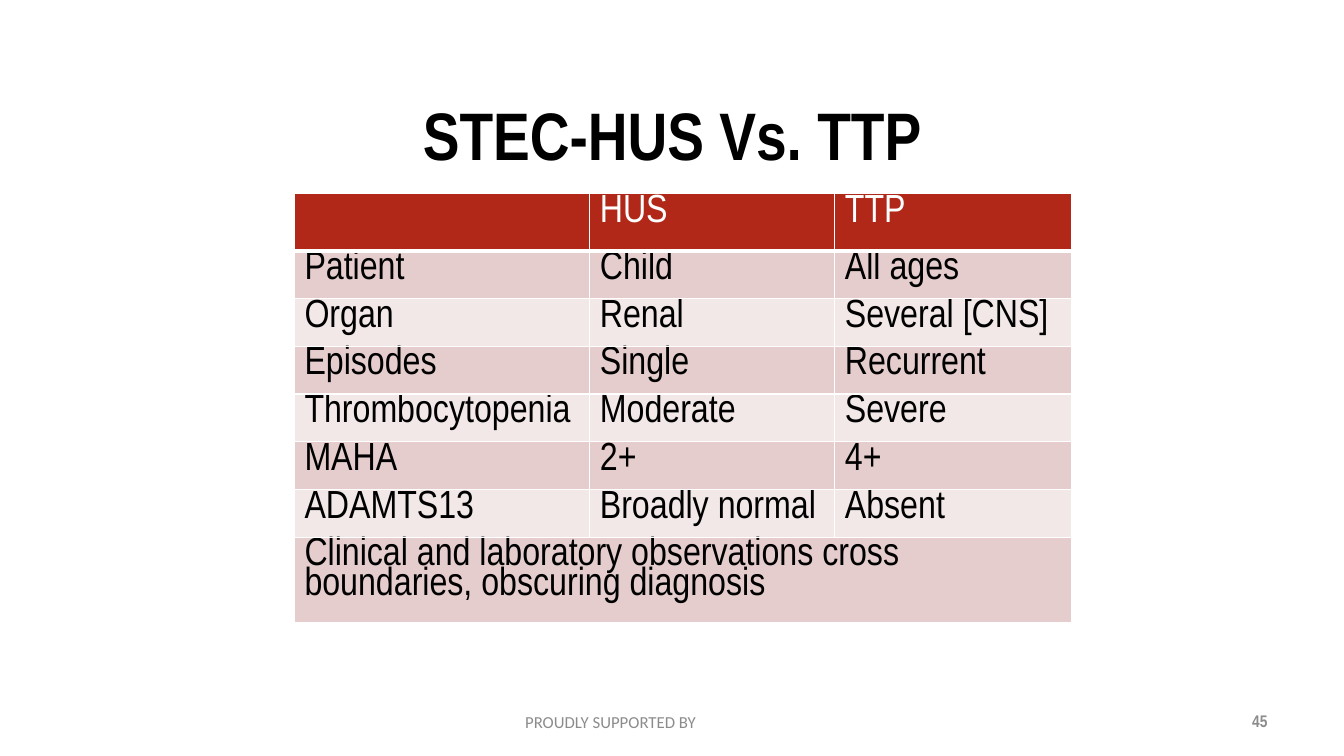
from lxml.etree import SubElement
from pptx import Presentation
from pptx.dml.color import RGBColor
from pptx.enum.text import MSO_ANCHOR, PP_ALIGN
from pptx.oxml.ns import qn
from pptx.util import Inches, Pt

COLORS = {"black": "000000", "white": "FFFFFF", "grey": "8C8C8C",
          "header": "B22818", "dark_band": "E4CDCC", "light_band": "F2E8E8"}
ROWS = [
    ("", "HUS", "TTP"),
    ("Patient", "Child", "All ages"),
    ("Organ", "Renal", "Several [CNS]"),
    ("Episodes", "Single", "Recurrent"),
    ("Thrombocytopenia", "Moderate", "Severe"),
    ("MAHA", "2+", "4+"),
    ("ADAMTS13", "Broadly normal", "Absent"),
    ("Clinical and laboratory observations cross boundaries, obscuring diagnosis", "", ""),
]
COLUMN_WIDTHS = (2.93, 2.43, 2.35)
ROW_HEIGHT, LAST_ROW_HEIGHT = 0.46, 0.83


class SlideBuilder:
    def __init__(self, prs, font="Arial Narrow"):
        self.slide = prs.slides.add_slide(prs.slide_layouts[5])
        self.font = font

    def style(self, p, size, color, bold=False, align=PP_ALIGN.LEFT, font=None):
        p.alignment = align
        p.font.name = font or self.font
        p.font.size = Pt(size)
        p.font.bold = bold
        p.font.color.rgb = RGBColor.from_string(COLORS[color])

    def title(self, text, x, y, w, h):
        sp = self.slide.shapes.title
        sp.left, sp.top, sp.width, sp.height = map(Inches, (x, y, w, h))
        tf = sp.text_frame
        tf.text = text
        tf.vertical_anchor = MSO_ANCHOR.MIDDLE
        self.style(tf.paragraphs[0], 48, "black", True, PP_ALIGN.CENTER)

    def label(self, text, x, y, w, h, **style):
        tf = self.slide.shapes.add_textbox(*map(Inches, (x, y, w, h))).text_frame
        tf.word_wrap = True
        tf.vertical_anchor = MSO_ANCHOR.MIDDLE
        tf.text = text
        self.style(tf.paragraphs[0], 12, "grey", **style)

    def borders(self, cell, top=1, bottom=1):
        """Draw white cell edges; widths are in points."""
        tc_pr = cell._tc.get_or_add_tcPr()
        for tag, width in (("lnL", 1), ("lnR", 1), ("lnT", top), ("lnB", bottom)):
            ln = SubElement(tc_pr, qn(f"a:{tag}"), w=str(Pt(width)))
            fill = SubElement(ln, qn("a:solidFill"))
            SubElement(fill, qn("a:srgbClr"), val=COLORS["white"])

    def table(self, rows, x, y, widths, heights):
        table = self.slide.shapes.add_table(
            len(rows), len(widths), Inches(x), Inches(y),
            Inches(sum(widths)), Inches(sum(heights))).table
        for column, width in zip(table.columns, widths):
            column.width = Inches(width)
        for i, (values, height) in enumerate(zip(rows, heights)):
            table.rows[i].height = Inches(height)
            band = "header" if i == 0 else "dark_band" if i % 2 else "light_band"
            for cell, text in zip(table.rows[i].cells, values):
                self.borders(cell, top=3 if i == 1 else 1, bottom=3 if i == 0 else 1)
                cell.fill.solid()
                cell.fill.fore_color.rgb = RGBColor.from_string(COLORS[band])
                cell.text = text
                p = cell.text_frame.paragraphs[0]
                p.line_spacing = 0.8
                self.style(p, 28, "black" if i else "white")
        last = len(rows) - 1
        table.cell(last, 0).merge(table.cell(last, len(widths) - 1))


def main():
    prs = Presentation()
    prs.slide_width, prs.slide_height = Inches(13.33), Inches(7.5)
    s = SlideBuilder(prs)
    s.label("PROUDLY SUPPORTED BY", 5.11, 6.96, 3.11, 0.4, font="Calibri")
    s.title("STEC-HUS Vs. TTP", 3.92, 0.83, 5.5, 1)
    heights = [ROW_HEIGHT] * (len(ROWS) - 1) + [LAST_ROW_HEIGHT]
    s.table(ROWS, 2.92, 1.92, COLUMN_WIDTHS, heights)
    s.label("45", 9.56, 6.95, 3.11, 0.4, bold=True, align=PP_ALIGN.RIGHT)
    prs.save("out.pptx")


if __name__ == "__main__":
    main()
